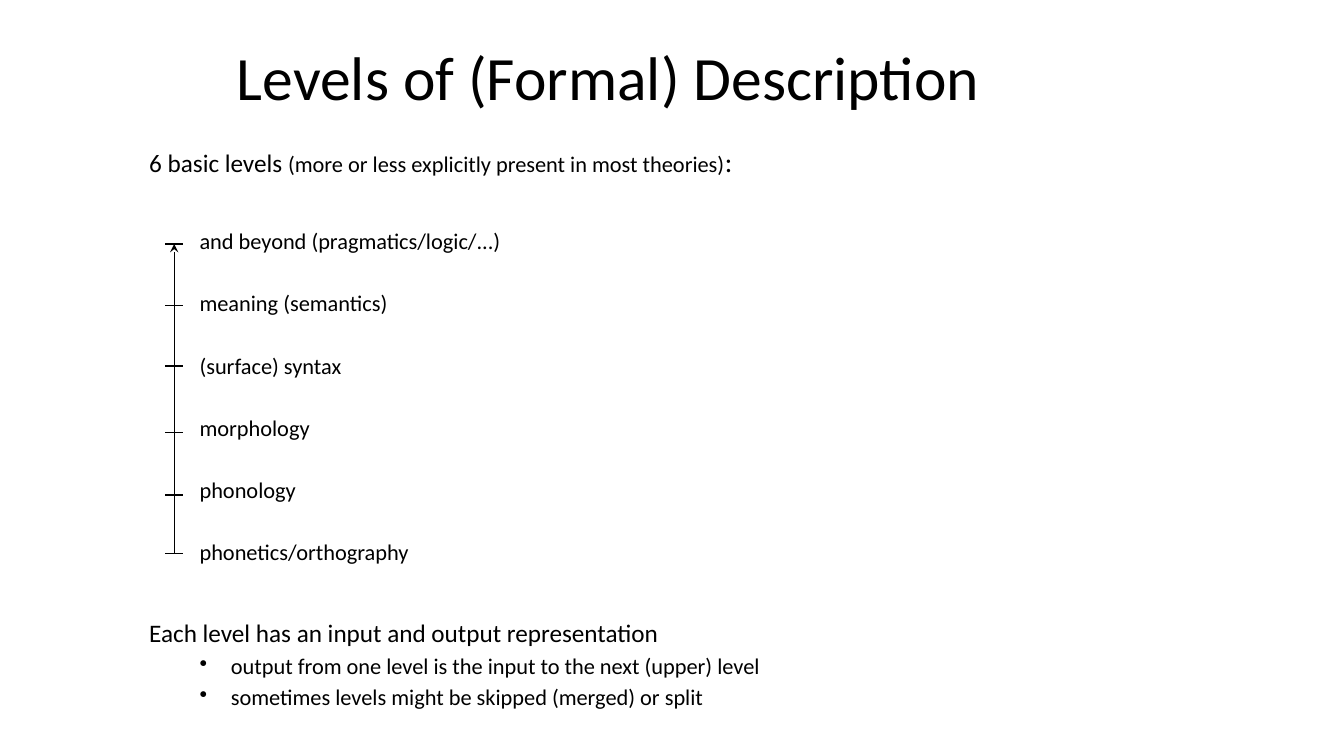
import pptx
import pptx.dml.color
import pptx.enum.shapes
import pptx.enum.text
import pptx.oxml
import pptx.oxml.ns
import pptx.util
from pptx.util import Cm, Pt

FONT = "Calibri"
BLACK = "000000"
LEVELS = [
    "and beyond (pragmatics/logic/...)",
    "meaning (semantics)",
    "(surface) syntax",
    "morphology",
    "phonology",
    "phonetics/orthography",
]
TICKS = [6.15, 7.7, 9.22, 10.9, 12.47, 13.94]
AXIS_X = 4.39
TICK_HALF = 0.22
NOTES = [
    "output from one level is the input to the next (upper) level",
    "sometimes levels might be skipped (merged) or split",
]


def color(value):
    return pptx.dml.color.RGBColor.from_string(value)


def add_child(parent, tag, **attrs):
    child = pptx.oxml.ns.qn(tag)
    child = parent.makeelement(child, attrs)
    parent.append(child)
    return child


def add_box(s, left, top, width, height, anchor):
    sp = s.shapes.add_textbox(Cm(left), Cm(top), Cm(width), Cm(height))
    tf = sp.text_frame
    tf.word_wrap = True
    tf.vertical_anchor = anchor
    return tf


def add_text(tf, text, size, before=0, indent=0, bullet=False):
    p = tf.paragraphs[0]
    if p.runs:
        p = tf.add_paragraph()
    p.line_spacing = 0.9
    p.space_before = Pt(before)
    p.font.name = FONT
    p.font.size = Pt(size)
    p.font.color.rgb = color(BLACK)
    p.add_run().text = text
    pPr = p._p.get_or_add_pPr()
    pPr.set("marL", str(Cm(indent)))
    if bullet:
        pPr.set("indent", str(Cm(-0.79)))
        mark = pptx.oxml.parse_xml(
            f'<a:buChar {pptx.oxml.ns.nsdecls("a")} char="•"/>')
        pPr.insert_element_before(mark, "a:tabLst", "a:defRPr", "a:extLst")
    return p


def add_line(s, x1, y1, x2, y2, arrow=False):
    line = s.shapes.add_connector(
        pptx.enum.shapes.MSO_CONNECTOR.STRAIGHT, Cm(x1), Cm(y1), Cm(x2), Cm(y2))
    line.line.color.rgb = color(BLACK)
    line.line.width = Pt(1)
    if arrow:
        add_child(line.line._get_or_add_ln(), "a:tailEnd", type="stealth")
    add_child(line._element.spPr, "a:effectLst")


def add_body(s):
    tf = add_box(s, 3.51, 3.61, 28.12, 14.73, pptx.enum.text.MSO_ANCHOR.TOP)
    p = add_text(tf, "6 basic levels ", 18, before=10)
    for text, size in [("(more or less explicitly present in most theories)", 16), (":", 20)]:
        r = p.add_run()
        r.text = text
        r.font.size = Pt(size)
    for i, level in enumerate(LEVELS):
        add_text(tf, level, 16, before=27.2 if i else 37, indent=1.27)
    add_text(tf, "Each level has an input and output representation", 18, before=39.5)
    for note in NOTES:
        add_text(tf, note, 16, before=5, indent=2.06, bullet=True)


def add_scale(s):
    add_line(s, AXIS_X, TICKS[-1], AXIS_X, TICKS[0], arrow=True)
    for y in TICKS:
        add_line(s, AXIS_X - TICK_HALF, y, AXIS_X + TICK_HALF, y)


def main():
    prs = pptx.Presentation()
    prs.slide_width = Cm(33.87)
    prs.slide_height = Cm(19.05)
    s = prs.slides.add_slide(prs.slide_layouts[6])
    title = add_box(s, 5.72, 0.43, 21.59, 3.18, pptx.enum.text.MSO_ANCHOR.MIDDLE)
    add_text(title, "Levels of (Formal) Description", 44)
    add_body(s)
    add_scale(s)
    prs.save("out.pptx")


if __name__ == "__main__":
    main()
